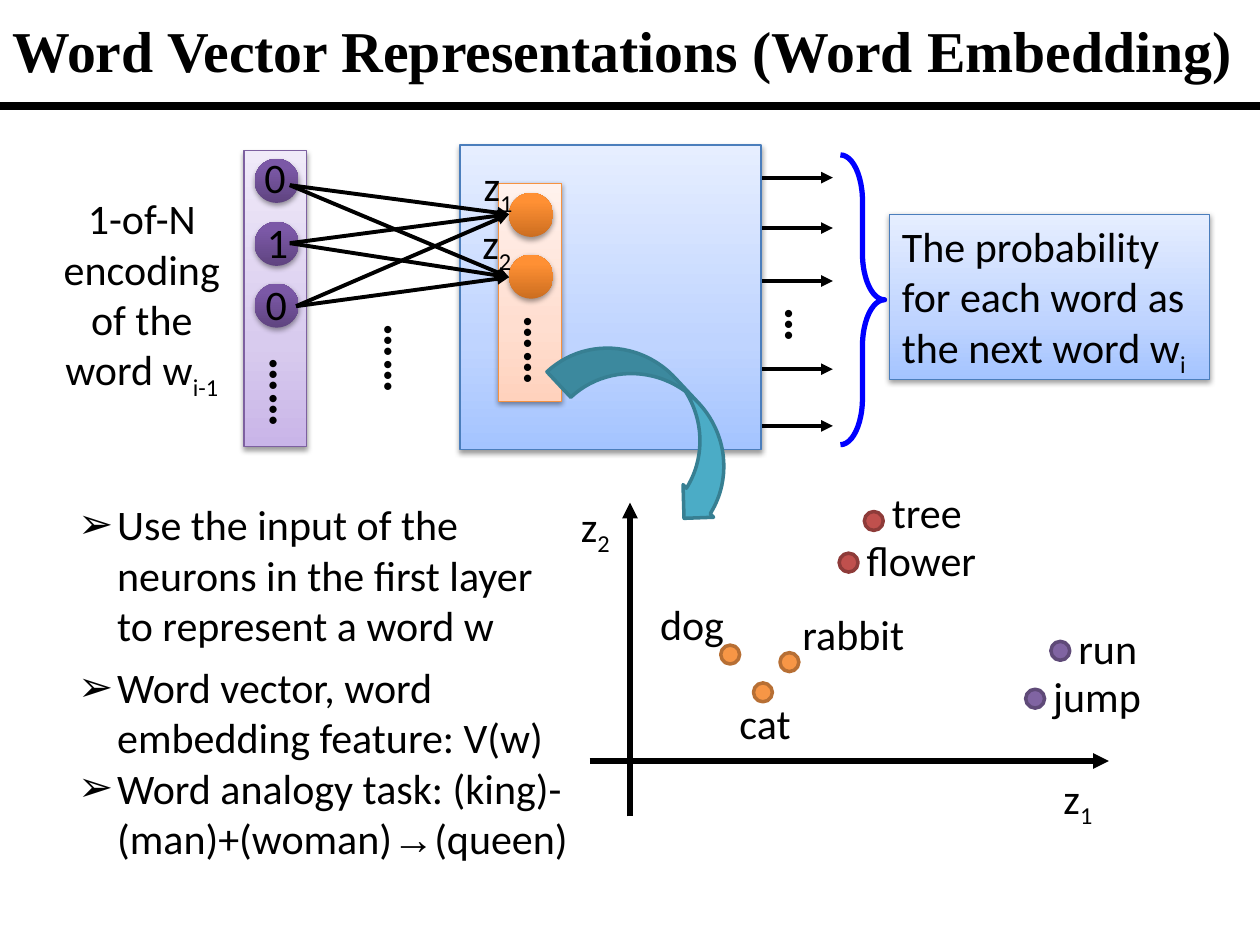
from copy import deepcopy
from dataclasses import dataclass

from lxml import etree
from pptx import Presentation
from pptx.dml.color import RGBColor
from pptx.enum.shapes import MSO_CONNECTOR, MSO_SHAPE
from pptx.enum.text import MSO_ANCHOR, MSO_AUTO_SIZE, PP_ALIGN
from pptx.oxml.ns import qn
from pptx.util import Inches, Pt

STRAIGHT = MSO_CONNECTOR.STRAIGHT
RECT, OVAL = MSO_SHAPE.RECTANGLE, MSO_SHAPE.OVAL
BRACE, CURVED_ARROW = MSO_SHAPE.RIGHT_BRACE, MSO_SHAPE.CURVED_LEFT_ARROW
LEFT, CENTER = PP_ALIGN.LEFT, PP_ALIGN.CENTER
TOP, MIDDLE = MSO_ANCHOR.TOP, MSO_ANCHOR.MIDDLE
GROW, NO_FIT = MSO_AUTO_SIZE.SHAPE_TO_FIT_TEXT, MSO_AUTO_SIZE.NONE
TWO_CONTENT = 3


@dataclass(frozen=True)
class Theme:
    title_font: str = "Times New Roman"
    body_font: str = "Calibri"
    title_size: int = 33
    body_size: int = 24
    dots_size: int = 28
    ink: str = "000000"
    brace: str = "0000FF"
    # gradients run from the bottom to the top: (position, colour)
    blue_box: tuple = ((0, "A4C4FF"), (0.35, "BFD4FF"), (1, "E6EEFF"))
    purple_box: tuple = ((0, "C9B5E8"), (0.35, "D8CBEE"), (1, "F0EAF9"))
    orange_box: tuple = ((0, "FFD2BD"), (0.35, "FFDED0"), (1, "FFF2ED"))
    purple_neuron: tuple = ((0, "5F4480"), (0.8, "7B58A6"), (1, "7C57A8"))
    orange_neuron: tuple = ((0, "CC6E20"), (0.8, "FF9034"), (1, "FF9136"))
    blue_edge: str = "4B7EBC"
    purple_edge: str = "7D60A0"
    orange_edge: str = "F69240"
    # flat colours: (fill, line)
    animal: tuple = ("F79646", "B76F34")
    plant: tuple = ("C0504D", "8E3B39")
    action: tuple = ("8064A2", "5F4A78")
    pointer: tuple = ("4BACC6", "377F92")


class SlideBuilder:
    def __init__(self, slide, theme):
        self.slide, self.theme = slide, theme

    def style_run(self, run, font=None, size=None, bold=False):
        run.font.name = font or self.theme.body_font
        run.font.size = Pt(size or self.theme.body_size)
        run.font.bold = bold
        run.font.color.rgb = RGBColor.from_string(self.theme.ink)

    def fill_paragraph(self, paragraph, text, sub="", align=LEFT, **style):
        """Set and style the text, with an optional subscript at its end."""
        paragraph.text = text
        paragraph.alignment = align
        if sub:
            paragraph.add_run().text = sub
        for run in paragraph.runs:
            self.style_run(run, **style)
        if sub:
            paragraph.runs[-1].font._element.set("baseline", "-25000")

    def place(self, shape, box):
        shape.left, shape.top, shape.width, shape.height = map(Inches, box)

    def title(self, text, box):
        holder = self.slide.shapes.title
        self.place(holder, box)
        frame = holder.text_frame
        frame.vertical_anchor, frame.auto_size = MIDDLE, NO_FIT
        self.fill_paragraph(frame.paragraphs[0], text, font=self.theme.title_font,
                            size=self.theme.title_size, bold=True)

    def bullets(self, index, items, box):
        holder = self.slide.placeholders[index]
        self.place(holder, box)
        frame = holder.text_frame
        frame.text = "\n".join(items)
        frame.vertical_anchor, frame.auto_size = TOP, GROW
        for paragraph, item in zip(frame.paragraphs, items):
            before, arrow, after = item.partition("→")
            self.fill_paragraph(paragraph, before)
            if arrow:
                for part, font in ((arrow, self.theme.title_font), (after, None)):
                    run = paragraph.add_run()
                    run.text = part
                    self.style_run(run, font=font)
            paragraph.space_before = Pt(0)
            properties = paragraph._p.get_or_add_pPr()
            properties.set("marL", str(Inches(0.31)))
            properties.set("indent", str(Inches(-0.31)))
            etree.SubElement(properties, qn("a:buFont"), typeface="Arial")
            etree.SubElement(properties, qn("a:buChar"), char="➢")

    def label(self, text, box, sub="", align=LEFT, rotation=0, **style):
        textbox = self.slide.shapes.add_textbox(*map(Inches, box))
        textbox.rotation = rotation
        frame = textbox.text_frame
        frame.word_wrap, frame.auto_size = True, GROW
        frame.text = text
        *heads, last = frame.paragraphs
        for head in heads:
            self.fill_paragraph(head, head.text, align=align, **style)
        self.fill_paragraph(last, last.text, sub, align, **style)

    def ellipsis(self, text, box):
        self.label(text, box, rotation=90, size=self.theme.dots_size, bold=True)

    def line(self, start, end, width, arrow=True):
        link = self.slide.shapes.add_connector(STRAIGHT, *map(Inches, (*start, *end)))
        link.line.color.rgb = RGBColor.from_string(self.theme.ink)
        link.line.width = Pt(width)
        properties = link._element.spPr
        if arrow:
            etree.SubElement(properties.find(qn("a:ln")), qn("a:tailEnd"), type="triangle")
        etree.SubElement(properties, qn("a:effectLst"))

    def shape(self, kind, box, fill=None, edge=None, width=2, rotation=0, adjust=()):
        shape = self.slide.shapes.add_shape(kind, *map(Inches, box))
        shape.shadow.inherit = False
        shape.rotation = rotation
        for i, value in enumerate(adjust):
            shape.adjustments[i] = value
        if fill:
            shape.fill.solid()
            shape.fill.fore_color.rgb = RGBColor.from_string(fill)
        else:
            shape.fill.background()
        if edge:
            shape.line.color.rgb = RGBColor.from_string(edge)
            shape.line.width = Pt(width)
        else:
            shape.line.fill.background()
        return shape

    def glossy(self, kind, box, stops, edge=None, rotation=0):
        """Add a shape with an upward gradient and a soft shadow below."""
        shape = self.shape(kind, box, edge=edge, width=0.75, rotation=rotation)
        shape.fill.gradient()
        shape.fill.gradient_angle = 90
        properties = shape._element.spPr
        properties.find(qn("a:gradFill")).set("rotWithShape", "0")
        stop_list = properties.find(".//" + qn("a:gsLst"))
        stop_list.append(deepcopy(stop_list[0]))
        for stop, (position, color) in zip(shape.fill.gradient_stops, stops):
            stop.position = position
            stop.color.rgb = RGBColor.from_string(color)
        shadow = etree.SubElement(
            properties.find(qn("a:effectLst")), qn("a:outerShdw"), blurRad=str(Pt(3.1)),
            dist=str(Pt(1.6)), dir="5400000", rotWithShape="0")
        black = etree.SubElement(shadow, qn("a:srgbClr"), val=self.theme.ink)
        etree.SubElement(black, qn("a:alpha"), val="38000")
        return shape

    def layer(self, bar, edge, stops, neuron_stops, x, neuron_tops, dots):
        """Add a column of neurons on a bar turned upright."""
        self.glossy(RECT, bar, stops, edge, rotation=90)
        for y in neuron_tops:
            self.glossy(OVAL, (x, y, 0.35, 0.35), neuron_stops, rotation=90)
        self.ellipsis("……", (*dots, 0.93, 0.37))

    def word_point(self, word, dot, label, width, colors):
        self.shape(OVAL, (*dot, 0.15, 0.15), *colors)
        self.label(word, (*label, width, 0.5))


def draw_network(page, theme):
    page.shape(BRACE, (6.67, 1.23, 0.35, 2.3), edge=theme.brace, width=3,
               adjust=(1.05, 0.5))
    for y in (1.41, 1.81, 2.23, 2.93, 3.38):
        page.line((5.78, y), (6.61, y), 2.25)
    page.ellipsis("…", (6.1, 2.34, 0.57, 0.57))
    page.glossy(RECT, (3.65, 1.15, 2.39, 2.42), theme.blue_box, theme.blue_edge)
    page.label("1-of-N encoding\nof the word w", (0.27, 1.48, 1.71, 1.72), "i-1", CENTER)

    page.layer((1.01, 2.12, 2.35, 0.5), theme.purple_edge, theme.purple_box,
               theme.purple_neuron, 2.02, (1.26, 1.76, 2.25), (1.93, 3.02))
    for digit, x, y in (("0", 2.0, 1.15), ("1", 2.02, 1.67), ("0", 2.01, 2.16)):
        page.label(digit, (x, y, 0.43, 0.5))

    output = page.glossy(RECT, (7.06, 1.7, 2.54, 1.31), theme.blue_box, theme.blue_edge)
    frame = output.text_frame
    frame.word_wrap, frame.auto_size, frame.vertical_anchor = True, GROW, TOP
    page.fill_paragraph(frame.paragraphs[0],
                        "The probability for each word as the next word w", "i")

    page.layer((3.34, 2.07, 1.73, 0.5), theme.orange_edge, theme.orange_box,
               theme.orange_neuron, 4.04, (1.53, 2.02), (3.95, 2.69))
    page.label("z", (3.74, 1.22, 0.6, 0.5), "1")
    page.label("z", (3.73, 1.68, 0.6, 0.5), "2")

    for hidden_y in (1.7, 2.2):
        for source in ((2.3, 1.47), (2.3, 1.93), (2.35, 2.43)):
            page.line(source, (4.04, hidden_y), 2.25)
    page.ellipsis("……", (2.84, 2.75, 0.93, 0.37))


def draw_word_space(page, theme):
    page.line((4.68, 6.04), (8.8, 6.04), 3)
    page.line((5, 6.48), (5, 3.99), 3)
    page.label("z", (8.22, 6.08, 0.67, 0.5), "1", CENTER)
    page.label("z", (4.39, 3.92, 0.67, 0.5), "2", CENTER)
    for point in (
        ("dog", (5.72, 5.12), (5.14, 4.7), 0.79, theme.animal),
        ("cat", (5.98, 5.42), (5.77, 5.49), 0.79, theme.animal),
        ("rabbit", (6.19, 5.18), (6.27, 4.78), 1.08, theme.animal),
        ("jump", (8.14, 5.47), (8.26, 5.27), 1.28, theme.action),
        ("run", (8.34, 5.09), (8.46, 4.89), 1.28, theme.action),
        ("flower", (6.66, 4.39), (6.78, 4.19), 1.28, theme.plant),
        ("tree", (6.86, 4.06), (6.98, 3.81), 1.28, theme.plant),
    ):
        page.word_point(*point)
    page.shape(CURVED_ARROW, (4.85, 2.47, 0.71, 1.77), *theme.pointer,
               rotation=316.9, adjust=(0.39, 0.5, 0.25))


def main():
    deck = Presentation()
    deck.slide_width, deck.slide_height = Inches(10), Inches(7.5)
    theme = Theme()
    page = SlideBuilder(deck.slides.add_slide(deck.slide_layouts[TWO_CONTENT]), theme)
    page.title("Word Vector Representations (Word Embedding)", (0, 0, 10, 0.79))
    page.line((0, 0.84), (10, 0.84), 4.5, arrow=False)
    page.bullets(1, ["Use the input of the neurons in the first layer to represent a word w"],
                 (0.52, 3.91, 4.03, 1.31))
    page.bullets(2, ["Word vector, word embedding feature: V(w)",
                     "Word analogy task: (king)-(man)+(woman)→(queen)"],
                 (0.52, 5.2, 4.33, 1.72))
    draw_network(page, theme)
    draw_word_space(page, theme)
    deck.save("out.pptx")


if __name__ == "__main__":
    main()
